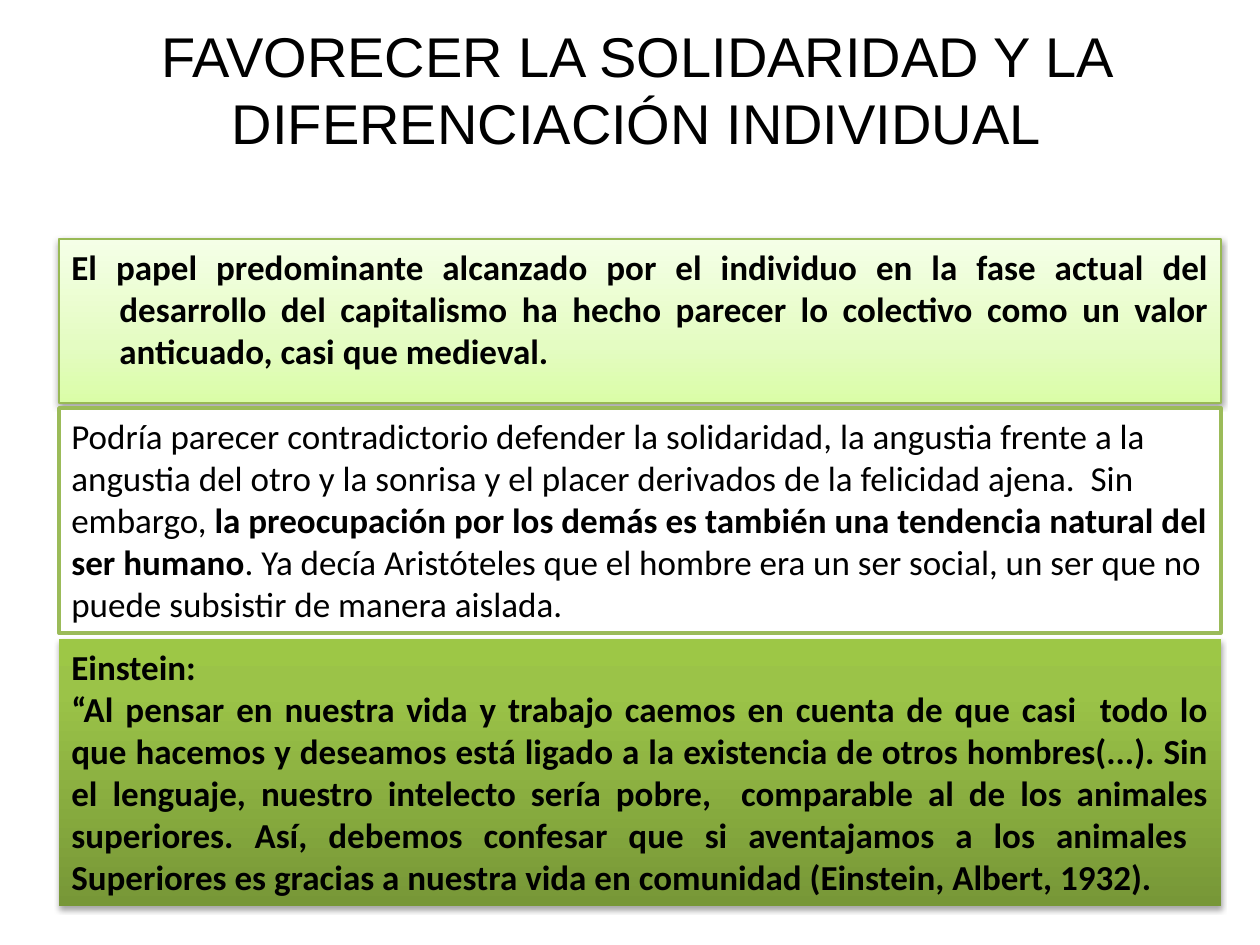
from lxml.etree import SubElement
from pptx import Presentation
from pptx.dml.color import RGBColor
from pptx.enum.shapes import MSO_SHAPE as SHAPE
from pptx.enum.text import MSO_ANCHOR as ANCHOR, PP_ALIGN as ALIGN
from pptx.oxml.ns import qn
from pptx.util import Emu, Pt

EMU_PER_PX = 914400 / 126
BLACK = RGBColor(0x00, 0x00, 0x00)
WHITE = RGBColor(0xFF, 0xFF, 0xFF)
GREEN = RGBColor(0x9B, 0xBB, 0x59)
EDGE_GREEN = RGBColor(0x98, 0xB9, 0x55)
PALE_STOPS = [
    (0, RGBColor(0xDA, 0xFD, 0xA7)),
    (35, RGBColor(0xE4, 0xFC, 0xC2)),
    (100, RGBColor(0xF5, 0xFF, 0xE7)),
]
DEEP_STOPS = [
    (0, RGBColor(0x77, 0x97, 0x37)),
    (80, RGBColor(0x9B, 0xC3, 0x48)),
    (100, RGBColor(0x9D, 0xC7, 0x46)),
]
BOX_LEFT, BOX_WIDTH = 59, 1162


def px(n):
    return Emu(round(n * EMU_PER_PX))


class SlideBuilder:
    title_font, title_size = "Arial", Pt(32)
    body_font, body_size = "Calibri", Pt(20)

    def __init__(self, slide):
        self.slide = slide

    def run(self, p, text, font, size, bold=False):
        r = p.add_run()
        r.text = text
        r.font.name, r.font.size, r.font.bold = font, size, bold
        r.font.color.rgb = BLACK

    def title(self, text, left, top, width, height):
        s = self.slide.shapes.title
        s.left, s.top, s.width, s.height = map(px, (left, top, width, height))
        tf = s.text_frame
        tf.word_wrap, tf.vertical_anchor = True, ANCHOR.MIDDLE
        p = tf.paragraphs[0]
        p.alignment = ALIGN.CENTER
        self.run(p, text, self.title_font, self.title_size)

    def box(self, top, height, fill, line=None, line_width=0):
        s = self.slide.shapes.add_shape(
            SHAPE.RECTANGLE, px(BOX_LEFT), px(top), px(BOX_WIDTH), px(height))
        s.shadow.inherit = False
        if isinstance(fill, list):
            self.gradient(s, fill)
        else:
            s.fill.solid()
            s.fill.fore_color.rgb = fill
        if line is None:
            s.line.fill.background()
        else:
            s.line.color.rgb = line
            s.line.width = Pt(line_width)
        tf = s.text_frame
        tf.word_wrap, tf.vertical_anchor = True, ANCHOR.TOP
        return s

    def gradient(self, s, stops):
        s.fill.gradient()
        s.fill.gradient_angle = 90
        gs_lst = s._element.spPr.find(qn("a:gradFill")).find(qn("a:gsLst"))
        gs_lst.clear()
        for pos, color in stops:
            gs = SubElement(gs_lst, qn("a:gs"), pos=str(pos * 1000))
            SubElement(gs, qn("a:srgbClr"), val=str(color))

    def shadow(self, s, alpha, distance):
        effects = s._element.spPr.find(qn("a:effectLst"))
        shadow = SubElement(
            effects, qn("a:outerShdw"), blurRad="40000", dist=str(distance),
            dir="5400000", rotWithShape="0")
        color = SubElement(shadow, qn("a:srgbClr"), val=str(BLACK))
        SubElement(color, qn("a:alpha"), val=str(alpha * 1000))

    def paragraph(self, s, runs, align=ALIGN.LEFT, hanging=0):
        tf = s.text_frame
        p = tf.paragraphs[0] if not tf.text else tf.add_paragraph()
        p.alignment = align
        if hanging:
            pPr = p._p.get_or_add_pPr()
            pPr.set("marL", str(px(hanging)))
            pPr.set("indent", str(-px(hanging)))
        for text, bold in runs:
            self.run(p, text, self.body_font, self.body_size, bold)


def main():
    prs = Presentation()
    prs.slide_width, prs.slide_height = px(1260), px(945)
    b = SlideBuilder(prs.slides.add_slide(prs.slide_layouts[5]))

    b.title("FAVORECER LA SOLIDARIDAD Y LA DIFERENCIACIÓN INDIVIDUAL",
            63, 10, 1148, 158)

    role = b.box(239, 164, PALE_STOPS, EDGE_GREEN, 0.75)
    b.shadow(role, 38, 20000)
    b.paragraph(role, [
        ("El papel predominante alcanzado por el individuo en la fase actual "
         "del desarrollo del capitalismo ha hecho parecer lo colectivo como un "
         "valor anticuado, casi que medieval.", True),
    ], ALIGN.JUSTIFY, hanging=48)

    solidarity = b.box(408, 225, WHITE, GREEN, 2)
    b.paragraph(solidarity, [
        ("Podría parecer contradictorio defender la solidaridad, la angustia "
         "frente a la angustia del otro y la sonrisa y el placer derivados de "
         "la felicidad ajena.  Sin embargo, ", False),
        ("la preocupación por los demás es también una tendencia natural del "
         "ser humano", True),
        (". Ya decía Aristóteles que el hombre era un ser social, un ser que "
         "no puede subsistir de manera aislada.", False),
    ])

    quote = b.box(639, 267, DEEP_STOPS)
    b.shadow(quote, 35, 23000)
    b.paragraph(quote, [("Einstein:", True)])
    b.paragraph(quote, [
        ("“Al pensar en nuestra vida y trabajo caemos en cuenta de que casi  "
         "todo lo que hacemos y deseamos está ligado a la existencia de otros "
         "hombres(...). Sin el lenguaje, nuestro intelecto sería pobre,  "
         "comparable al de los animales superiores. Así, debemos confesar que "
         "si aventajamos a los animales  Superiores es gracias a nuestra vida "
         "en comunidad (Einstein, Albert, 1932).", True),
    ], ALIGN.JUSTIFY)

    prs.save("out.pptx")


if __name__ == "__main__":
    main()
